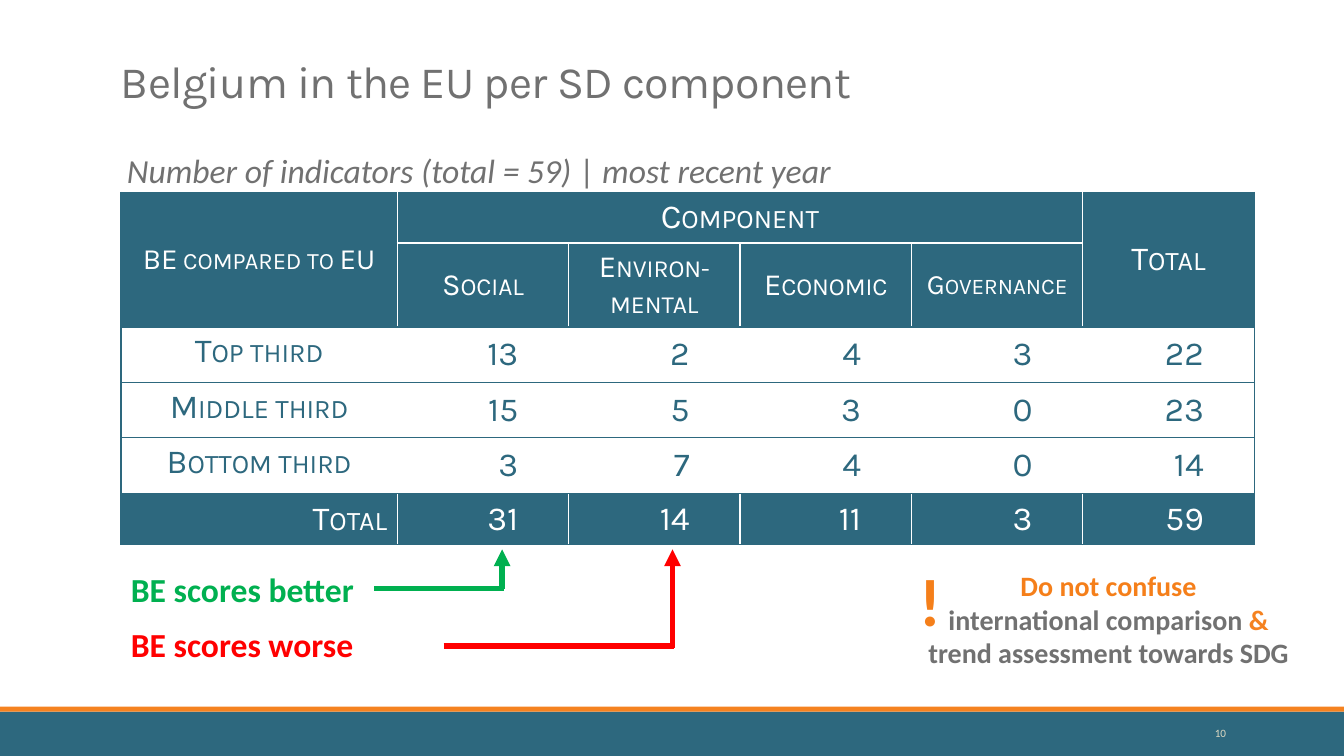
"""Build the slide comparing Belgium with the EU per SD component."""
from typing import NamedTuple

from lxml import etree
from pptx import Presentation
from pptx.dml.color import RGBColor
from pptx.enum.shapes import MSO_CONNECTOR, MSO_SHAPE
from pptx.enum.text import MSO_ANCHOR, PP_ALIGN
from pptx.oxml.ns import qn
from pptx.util import Inches, Pt

LEFT, CENTER, RIGHT = PP_ALIGN.LEFT, PP_ALIGN.CENTER, PP_ALIGN.RIGHT
TOP, MIDDLE = MSO_ANCHOR.TOP, MSO_ANCHOR.MIDDLE
RECTANGLE = MSO_SHAPE.RECTANGLE
STRAIGHT = MSO_CONNECTOR.STRAIGHT

TEAL, WHITE, GREY = "2D687E", "FFFFFF", "717171"
ORANGE, BRIGHT_ORANGE = "F58220", "F57F1A"
GREEN, RED, BEIGE = "00B050", "FF0000", "DDD9C3"


class Bar(NamedTuple):
    top: float
    height: float
    color: str


class Label(NamedTuple):
    text: str
    box: tuple[float, float, float, float]
    size: float
    color: str
    font: str = "Calibri"
    bold: bool = False
    align: PP_ALIGN = LEFT
    anchor: MSO_ANCHOR = TOP


class Line(NamedTuple):
    begin: tuple[float, float]
    end: tuple[float, float]
    color: str
    arrow: bool = False


BARS = [Bar(7.06, 0.44, TEAL), Bar(7.01, 0.05, ORANGE)]
TITLE = Label("Belgium in the EU per SD component", (1.2, 0.31, 11.22, 1.07),
              32, GREY, "Karla", anchor=MIDDLE)
LABELS = [
    Label("BE scores better", (1.2, 5.59, 2.85, 0.5), 24, GREEN, bold=True),
    Label("BE scores worse", (1.2, 6.14, 3.13, 0.5), 24, RED, bold=True),
    Label("!", (9.02, 5.5, 0.33, 0.91), 48, BRIGHT_ORANGE, bold=True),
    Label("10", (10.83, 7.06, 1.43, 0.43), 8, BEIGE, align=RIGHT, anchor=MIDDLE),
]
SUBTITLE = Label("", (1.16, 1.44, 7.92, 0.5), 24, GREY)
SUBTITLE_RUNS = [("Number of indicators (total = 59) ", True), ("| ", False),
                 ("most recent year", True)]
WARNING = Label("", (8.99, 5.59, 4.01, 1.11), 20, GREY, bold=True, align=CENTER)
WARNING_LINES = [
    [("Do not confuse", BRIGHT_ORANGE)],
    [("international comparison ", GREY), ("&", ORANGE)],
    [("trend assessment towards SDG", GREY)],
]
LINES = [
    Line((3.71, 5.84), (5, 5.84), GREEN),
    Line((6.67, 5.45), (6.67, 6.43), RED, True),
    Line((4.98, 5.45), (4.98, 5.84), GREEN, True),
    Line((4.4, 6.41), (6.68, 6.41), RED),
]

COL_WIDTHS = [2.74] + [1.7] * 5
ROW_HEIGHTS = [0.47, 0.47, 0.55, 0.55, 0.55, 0.51]
HEADER_ROWS, LAST_ROW, LAST_COL = 2, 5, 5
MERGES = [(0, 0, 1, 0), (0, 1, 0, 4), (0, 5, 1, 5)]
CELLS = [
    ["BE compared to EU", "Component", "", "", "", "Total"],
    ["", "Social", "Environ-mental", "Economic", "Governance", ""],
    ["Top third", "13", "2", "4", "3", "22"],
    ["Middle third", "15", "5", "3", "0", "23"],
    ["Bottom third", "3", "7", "4", "0", "14"],
    ["Total", "31", "14", "11", "3", "59"],
]
HEADER_SIZES = {"BE compared to EU": 21, "Component": 24, "Total": 24, "Governance": 20}


def rgb(color: str) -> RGBColor:
    """Turn a hex string into a colour."""
    return RGBColor.from_string(color)


def set_font(font, name: str, size: float, color: str, bold: bool = False) -> None:
    """Set the face, size, colour and weight of a font."""
    font.name, font.size, font.bold = name, Pt(size), bold
    font.color.rgb = rgb(color)


def add_bar(s, bar: Bar) -> None:
    """Draw a full-width footer bar."""
    sp = s.shapes.add_shape(RECTANGLE, 0, Inches(bar.top), Inches(13.33), Inches(bar.height))
    sp.shadow.inherit = False
    sp.fill.solid()
    sp.fill.fore_color.rgb = rgb(bar.color)
    sp.line.fill.background()


def add_label(s, label: Label):
    """Add a text box and return its paragraph."""
    tf = s.shapes.add_textbox(*map(Inches, label.box)).text_frame
    tf.word_wrap = True
    tf.vertical_anchor = label.anchor
    p = tf.paragraphs[0]
    p.alignment = label.align
    set_font(p.font, label.font, label.size, label.color, label.bold)
    if label.text:
        p.add_run().text = label.text
    return p


def add_title(s) -> None:
    """Add the slide title with tight spacing."""
    p = add_label(s, TITLE)
    p.line_spacing = 0.85
    p._p.pPr.get_or_add_defRPr().set("spc", "-50")
    tf = s.shapes[-1].text_frame
    tf.margin_left = 0


def add_subtitle(s) -> None:
    """Add the line above the table."""
    p = add_label(s, SUBTITLE)
    for text, italic in SUBTITLE_RUNS:
        r = p.add_run()
        r.text = text
        r.font.italic = italic


def add_warning(s) -> None:
    """Add the warning with its coloured words."""
    p = add_label(s, WARNING)
    for i, line in enumerate(WARNING_LINES):
        if i:
            p.add_line_break()
        for text, color in line:
            r = p.add_run()
            r.text = text
            r.font.color.rgb = rgb(color)


def add_line(s, line: Line) -> None:
    """Draw a thick line, with an arrowhead at its start if wanted."""
    ends = [Inches(v) for v in line.begin + line.end]
    cx = s.shapes.add_connector(STRAIGHT, *ends)
    cx.line.color.rgb = rgb(line.color)
    cx.line.width = Pt(4)
    if line.arrow:
        etree.SubElement(cx.line._get_or_add_ln(), qn("a:headEnd"), type="triangle")
    etree.SubElement(cx._element.spPr, qn("a:effectLst"))


def set_borders(cell, row: int, col: int) -> None:
    """Draw teal outer edges and body rules, and white edges elsewhere."""
    body = HEADER_ROWS <= row < LAST_ROW
    teal_edges = {"a:lnL": col == 0, "a:lnR": col == LAST_COL,
                  "a:lnT": body or row in (0, LAST_ROW),
                  "a:lnB": body or row in (1, LAST_ROW)}
    tc_pr = cell._tc.get_or_add_tcPr()
    for tag, teal in teal_edges.items():
        ln = etree.SubElement(tc_pr, qn(tag), w=str(Pt(1)))
        fill = etree.SubElement(ln, qn("a:solidFill"))
        etree.SubElement(fill, qn("a:srgbClr"), val=TEAL if teal else WHITE)


def fill_cell(cell, row: int, col: int, text: str) -> None:
    """Style one table cell and write its text."""
    header, body = row < HEADER_ROWS, HEADER_ROWS <= row < LAST_ROW
    number = not header and col > 0
    set_borders(cell, row, col)
    cell.fill.solid()
    cell.fill.fore_color.rgb = rgb(WHITE if body else TEAL)
    cell.vertical_anchor = TOP if body and col == 0 else MIDDLE
    if number:
        cell.margin_right = Inches(0.5)
    p = cell.text_frame.paragraphs[0]
    p.alignment = RIGHT if number or row == LAST_ROW else CENTER
    size = HEADER_SIZES.get(text, 22) if header else 24
    if text:
        p.add_run().text = text
    set_font(p.font, "Karla", size, TEAL if body else WHITE)
    if not number:
        p._p.pPr.get_or_add_defRPr().set("cap", "small")


def add_scores(s) -> None:
    """Add the table of indicator counts."""
    frame = s.shapes.add_table(len(CELLS), len(COL_WIDTHS), Inches(1.2), Inches(1.91),
                               Inches(11.22), Inches(3.5))
    table = frame.table
    table.first_row = table.horz_banding = False
    for column, width in zip(table.columns, COL_WIDTHS):
        column.width = Inches(width)
    for row, height in zip(table.rows, ROW_HEIGHTS):
        row.height = Inches(height)
    for i, texts in enumerate(CELLS):
        for j, text in enumerate(texts):
            fill_cell(table.cell(i, j), i, j, text)
    for top, left, bottom, right in MERGES:
        table.cell(top, left).merge(table.cell(bottom, right))


def main() -> None:
    """Build and save the slide."""
    prs = Presentation()
    prs.slide_width, prs.slide_height = Inches(13.33), Inches(7.5)
    s = prs.slides.add_slide(prs.slide_layouts[6])
    for bar in BARS:
        add_bar(s, bar)
    add_title(s)
    add_scores(s)
    add_subtitle(s)
    for line in LINES:
        add_line(s, line)
    add_warning(s)
    for label in LABELS:
        add_label(s, label)
    prs.save("out.pptx")


if __name__ == "__main__":
    main()
